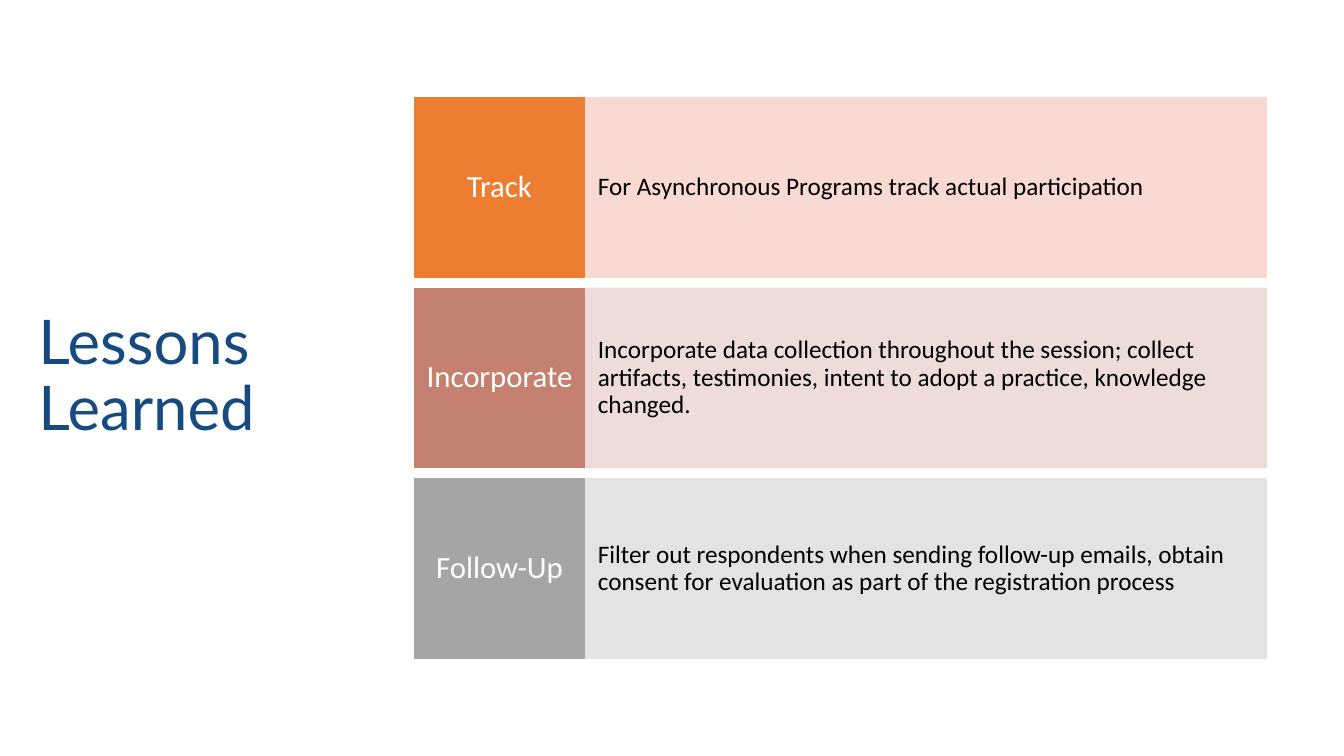
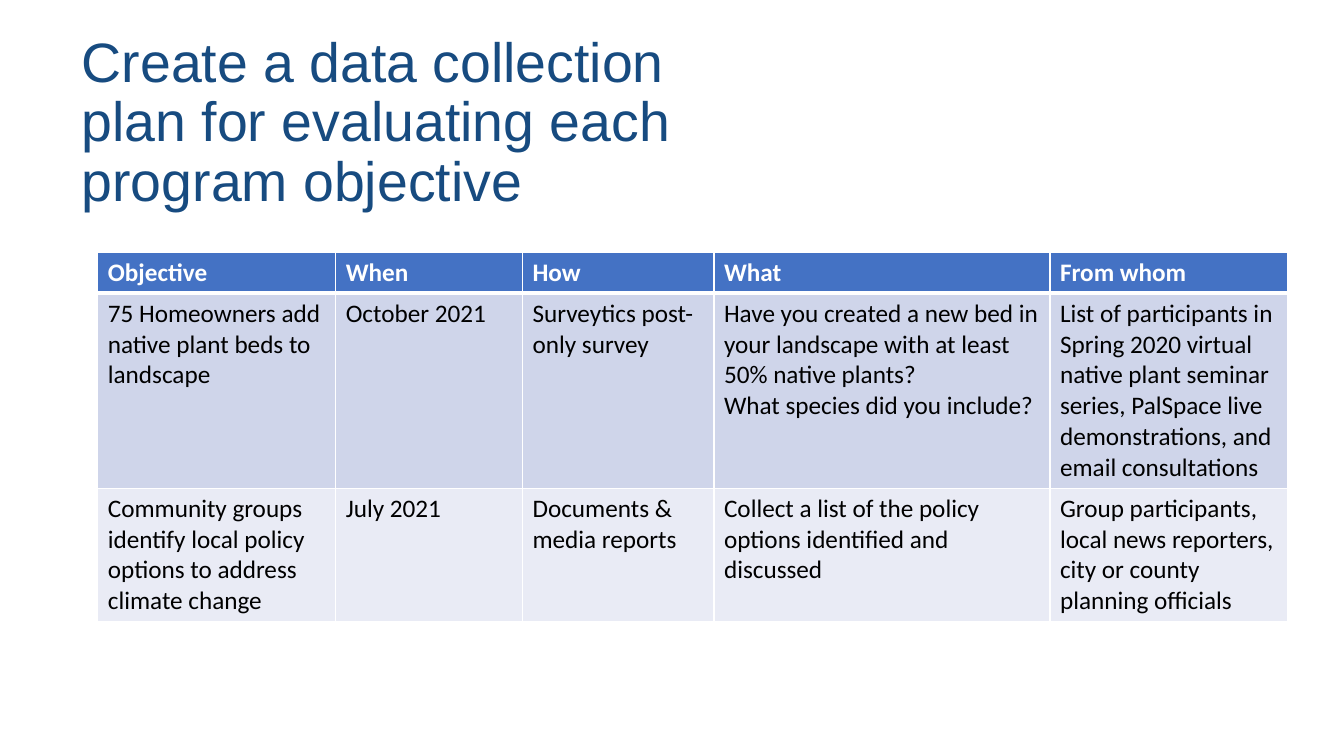
import pptx
import pptx.util
import pptx.dml.color
import pptx.enum.shapes
import pptx.enum.text
import pptx.oxml
import pptx.oxml.ns
from lxml import etree

Pt = pptx.util.Pt
ALIGN = pptx.enum.text.PP_ALIGN
MIDDLE = pptx.enum.text.MSO_ANCHOR.MIDDLE
RECT = pptx.enum.shapes.MSO_SHAPE.RECTANGLE
qn = pptx.oxml.ns.qn

NAVY, WHITE, BLACK, BLUE = "174B80", "FFFFFF", "000000", "4472C4"
BODY_FONT = "Calibri"

prs = pptx.Presentation()
prs.slide_width = pptx.util.Inches(13.333)
prs.slide_height = pptx.util.Inches(7.5)


def place(x, y, w, h):
    """Turn percentages of the slide's size into left, top, width, height."""
    sizes = (prs.slide_width, prs.slide_height) * 2
    return [pptx.util.Emu(round(size * share / 100)) for size, share in zip(sizes, (x, y, w, h))]


def style(p, font, size, color, bold=False):
    for r in p.runs:
        r.font.name, r.font.size, r.font.bold = font, Pt(size), bold
        r.font.color.rgb = pptx.dml.color.RGBColor.from_string(color)


# Slides and their titles
titles = [
    ("Lessons Learned", "Lato", 44, (2.1, 16.4, 24.15, 67.07)),
    ("Create a data collection plan for evaluating each program objective",
     "Arial", 39.6, (5.33, 4.27, 53.48, 24.27)),
]
slides = []
for text, font, size, area in titles:
    s = prs.slides.add_slide(prs.slide_layouts.get_by_name("Title Only"))
    title = s.shapes.title
    title.left, title.top, title.width, title.height = place(*area)
    tf = title.text_frame
    tf.text = text
    tf.word_wrap = True
    tf.auto_size = pptx.enum.text.MSO_AUTO_SIZE.NONE
    tf.vertical_anchor = MIDDLE
    p = tf.paragraphs[0]
    p.alignment, p.line_spacing = ALIGN.LEFT, 0.9
    style(p, font, size, NAVY)
    slides.append(s)
lessons_slide, plan_slide = slides

# Lessons: a pale description beside each coloured label
lessons = [
    ("Track", "ED7D31", "F8D7CE", "For Asynchronous Programs track actual participation"),
    ("Incorporate", "C48170", "EDD9D7",
     "Incorporate data collection throughout the session; collect artifacts, "
     "testimonies, intent to adopt a practice, knowledge changed."),
    ("Follow-Up", "A5A5A5", "E1E1E1",
     "Filter out respondents when sending follow-up emails, obtain consent "
     "for evaluation as part of the registration process"),
]
LABEL_X, LABEL_W, DETAIL_W = 30.83, 12.68, 50.7
FIRST_Y, ROW_H, ROW_STEP = 12.93, 23.73, 25.2
for i, (label, strong, pale, detail) in enumerate(lessons):
    y = FIRST_Y + i * ROW_STEP
    cards = [
        (LABEL_X + LABEL_W, DETAIL_W, detail, pale, 90, 18, BLACK, ALIGN.LEFT, 0.13, 0.45),
        (LABEL_X, LABEL_W, label, strong, 100, 22, WHITE, ALIGN.CENTER, 0.09, 0.18),
    ]
    for x, w, text, fill, opacity, size, color, align, side, end in cards:
        sp = lessons_slide.shapes.add_shape(RECT, *place(x, y, w, ROW_H))
        sp.shadow.inherit = False
        sp.line.width = Pt(1)
        for paint in (sp.fill, sp.line.fill):
            paint.solid()
            paint.fore_color.rgb = pptx.dml.color.RGBColor.from_string(fill)
        if opacity < 100:
            for clr in sp.element.spPr.iter(qn("a:srgbClr")):
                etree.SubElement(clr, qn("a:alpha"), val=str(opacity * 1000))
        tf = sp.text_frame
        tf.text = text
        tf.word_wrap = True
        tf.vertical_anchor = MIDDLE
        tf.margin_left = tf.margin_right = pptx.util.Inches(side)
        tf.margin_top = tf.margin_bottom = pptx.util.Inches(end)
        p = tf.paragraphs[0]
        p.alignment, p.line_spacing = align, 0.9
        style(p, BODY_FONT, size, color)

# Data collection plan
plan = [
    ["Objective", "When", "How", "What", "From whom"],
    ["75 Homeowners add native plant beds to landscape", "October 2021",
     "Surveytics post-only survey",
     "Have you created a new bed in your landscape with at least 50% native plants?\n"
     "What species did you include?",
     "List of participants in Spring 2020 virtual native plant seminar series, "
     "PalSpace live demonstrations, and email consultations"],
    ["Community groups identify local policy options to address climate change",
     "July 2021", "Documents & media reports",
     "Collect a list of the policy options identified and discussed",
     "Group participants, local news reporters, city or county planning officials"],
]
col_shares = [17.7, 13.9, 14.25, 25, 17.7]
row_shares = [5.47, 25.8, 17.5]
row_fills = [BLUE, "CFD5EA", "E9EBF5"]
area = place(7.28, 33.33, sum(col_shares), sum(row_shares))
table = plan_slide.shapes.add_table(len(plan), len(col_shares), *area).table
for col, share in zip(table.columns, col_shares):
    col.width = place(0, 0, share, 0)[2]
for i, (row, share, fill) in enumerate(zip(table.rows, row_shares, row_fills)):
    row.height = place(0, 0, 0, share)[3]
    header = i == 0
    for cell, text in zip(row.cells, plan[i]):
        cell.text = text
        cell.fill.solid()
        cell.fill.fore_color.rgb = pptx.dml.color.RGBColor.from_string(fill)
        for p in cell.text_frame.paragraphs:
            style(p, BODY_FONT, 18, WHITE if header else BLACK, header)
        tcPr = cell._tc.get_or_add_tcPr()
        for k, side in enumerate("LRTB"):
            thick = (header and side == "B") or (i == 1 and side == "T")
            ln = etree.Element(qn(f"a:ln{side}"), w=str(Pt(3 if thick else 1)))
            solid = etree.SubElement(ln, qn("a:solidFill"))
            etree.SubElement(solid, qn("a:srgbClr"), val=WHITE)
            tcPr.insert(k, ln)

prs.save("out.pptx")
